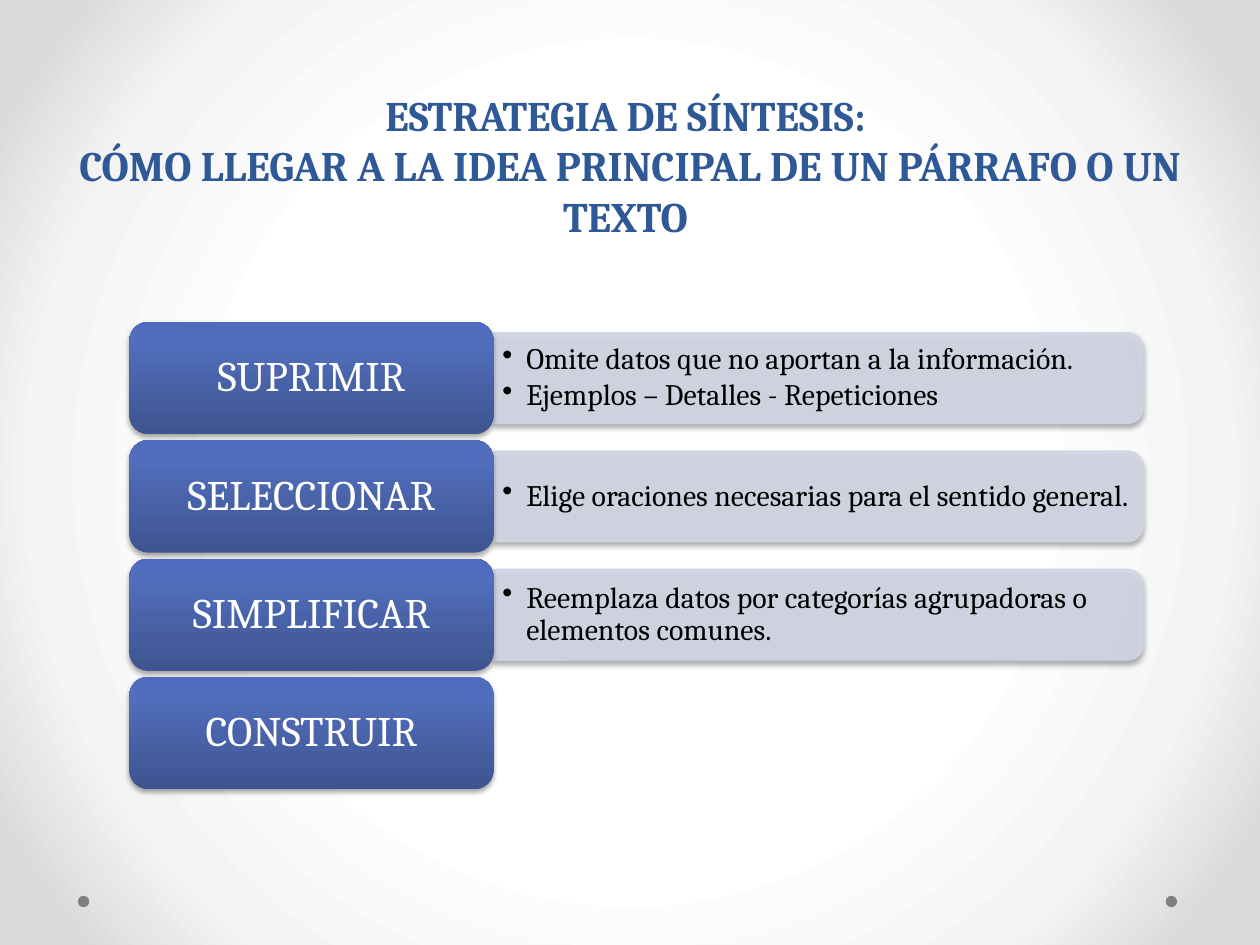
from lxml import etree
from pptx import Presentation
from pptx.dml.color import RGBColor
from pptx.enum.shapes import MSO_SHAPE
from pptx.enum.text import MSO_ANCHOR, PP_ALIGN
from pptx.oxml.ns import qn
from pptx.util import Cm, Pt

ROUNDED, TAB, DOT = (MSO_SHAPE.ROUNDED_RECTANGLE, MSO_SHAPE.ROUND_2_SAME_RECTANGLE,
                     MSO_SHAPE.OVAL)
MIDDLE, BOTTOM = MSO_ANCHOR.MIDDLE, MSO_ANCHOR.BOTTOM
CENTER, LEFT = PP_ALIGN.CENTER, PP_ALIGN.LEFT

FONT = "Cambria"
TITLE_BLUE = RGBColor(0x2F, 0x58, 0x97)
PANEL = RGBColor(0xD2, 0xD6, 0xE5)
GRAY = RGBColor(0x80, 0x80, 0x80)
WHITE = RGBColor(0xFF, 0xFF, 0xFF)
BLACK = RGBColor(0x00, 0x00, 0x00)
BACKGROUND_STOPS = [(50, WHITE), (76, RGBColor(0xF4, 0xF4, 0xF4)),
                    (92, RGBColor(0xDA, 0xDA, 0xDA))]
LABEL_STOPS = [(0, RGBColor(0x3E, 0x54, 0x90)), (80, RGBColor(0x51, 0x6D, 0xBB)),
               (100, RGBColor(0x4F, 0x6C, 0xBE))]

TITLE_LINES = ["ESTRATEGIA DE SÍNTESIS: ",
               "CÓMO LLEGAR A LA IDEA PRINCIPAL DE UN PÁRRAFO O UN TEXTO "]
STEPS = [
    ("SUPRIMIR", ["Omite datos que no aportan a la información.",
                  "Ejemplos – Detalles - Repeticiones"]),
    ("SELECCIONAR", ["Elige oraciones necesarias para el sentido general."]),
    ("SIMPLIFICAR", ["Reemplaza datos por categorías agrupadoras o elementos comunes."]),
    ("CONSTRUIR", []),
]


def add_child(parent, tag, **attributes):
    child = etree.SubElement(parent, qn(tag))
    for name, value in attributes.items():
        child.set(name, str(value))
    return child


def set_gradient(fill, grad, stops, angle=None):
    """Fill with the stops, linear at an angle or else circular from the middle."""
    fill.gradient()
    grad = grad()
    for child in list(grad):
        grad.remove(child)
    stop_list = add_child(grad, "a:gsLst")
    for position, color in stops:
        stop = add_child(stop_list, "a:gs", pos=position * 1000)
        add_child(stop, "a:srgbClr", val=color)
    if angle is None:
        circle = add_child(grad, "a:path", path="circle")
        add_child(circle, "a:fillToRect", l=50000, t=50000, r=50000, b=50000)
    else:
        add_child(grad, "a:lin", ang=angle * 60000, scaled=0)


def set_shadow(shape):
    shape.shadow.inherit = False
    effects = shape._element.spPr.find(qn("a:effectLst"))
    shadow = add_child(effects, "a:outerShdw", blurRad=Pt(3.1), dist=Pt(1.8),
                       dir=90 * 60000, rotWithShape=0)
    add_child(add_child(shadow, "a:srgbClr", val=BLACK), "a:alpha", val=35000)


def add_span(para, text, size, color, bold=False):
    span = para.add_run()
    span.text = text
    span.font.name, span.font.size, span.font.bold = FONT, Pt(size), bold
    span.font.color.rgb = color


def draw_background(page):
    fill = page.background.fill
    set_gradient(fill, lambda: page._element.find(".//" + qn("a:gradFill")),
                 BACKGROUND_STOPS)
    size = Cm(0.23)
    for left in (Cm(1.57), Cm(23.5)):
        dot = page.shapes.add_shape(DOT, left, Cm(18.06), size, size)
        dot.shadow.inherit = False
        dot.fill.solid()
        dot.fill.fore_color.rgb = GRAY
        dot.line.fill.background()


def place_title(page, left, top, width, height):
    title = page.shapes.title
    title.left, title.top, title.width, title.height = left, top, width, height
    frame = title.text_frame
    frame.vertical_anchor, frame.word_wrap = BOTTOM, True
    para = frame.paragraphs[0]
    para.alignment = CENTER
    for index, line in enumerate(TITLE_LINES):
        if index:
            para.add_line_break()
        add_span(para, line, 24, TITLE_BLUE, bold=True)


def draw_panel(page, left, top, width, height):
    """A bar rounded on its right side, made by turning an upright tab."""
    panel = page.shapes.add_shape(TAB, left + (width - height) // 2,
                                  top + (height - width) // 2, height, width)
    panel.rotation = 90
    panel.fill.solid()
    panel.fill.fore_color.rgb = PANEL
    panel.line.color.rgb = PANEL
    panel.line.width = Pt(0.75)
    for color in panel._element.spPr.iter(qn("a:srgbClr")):
        add_child(color, "a:alpha", val=90000)
    set_shadow(panel)


def write_details(page, details, left, top, width, height):
    frame = page.shapes.add_textbox(left, top, width, height).text_frame
    frame.word_wrap, frame.vertical_anchor = True, MIDDLE
    frame.margin_left = frame.margin_right = Cm(0.18)
    frame.margin_top = frame.margin_bottom = Cm(0.1)
    for index, detail in enumerate(details):
        para = frame.add_paragraph() if index else frame.paragraphs[0]
        para.alignment, para.line_spacing, para.space_after = LEFT, 0.9, Pt(2.5)
        properties = para._p.get_or_add_pPr()
        properties.set("marL", str(Cm(0.48)))
        properties.set("indent", str(-Cm(0.48)))
        add_child(properties, "a:buChar", char="•")
        add_span(para, detail, 17, BLACK)


def draw_label(page, text, left, top, width, height):
    label = page.shapes.add_shape(ROUNDED, left, top, width, height)
    set_gradient(label.fill, lambda: label._element.spPr.find(qn("a:gradFill")),
                 LABEL_STOPS, angle=270)
    label.line.fill.background()
    set_shadow(label)
    frame = label.text_frame
    frame.word_wrap, frame.vertical_anchor = True, MIDDLE
    para = frame.paragraphs[0]
    para.alignment, para.line_spacing = CENTER, 0.9
    add_span(para, text, 24, WHITE)


def draw_step(page, text, details, left, top, width, height):
    label_width, panel_height = Cm(7.34), Cm(1.83)
    if details:
        panel_box = (left + label_width, top + (height - panel_height) // 2,
                     width - label_width, panel_height)
        draw_panel(page, *panel_box)
        write_details(page, details, *panel_box)
    draw_label(page, text, left, top, label_width, height)


def draw_steps(page, left, top, width, height):
    gap = Cm(0.12)
    step_height = (height - gap * (len(STEPS) - 1)) // len(STEPS)
    for index, (text, details) in enumerate(STEPS):
        draw_step(page, text, details, left, top + index * (step_height + gap),
                  width, step_height)


def main():
    deck = Presentation()
    deck.slide_width, deck.slide_height = Cm(25.4), Cm(19.05)
    page = deck.slides.add_slide(deck.slide_layouts[5])
    draw_background(page)
    place_title(page, Cm(1.27), Cm(1.6), Cm(22.86), Cm(3.38))
    draw_steps(page, Cm(2.61), Cm(6.49), Cm(20.43), Cm(9.42))
    deck.save("out.pptx")


if __name__ == "__main__":
    main()
